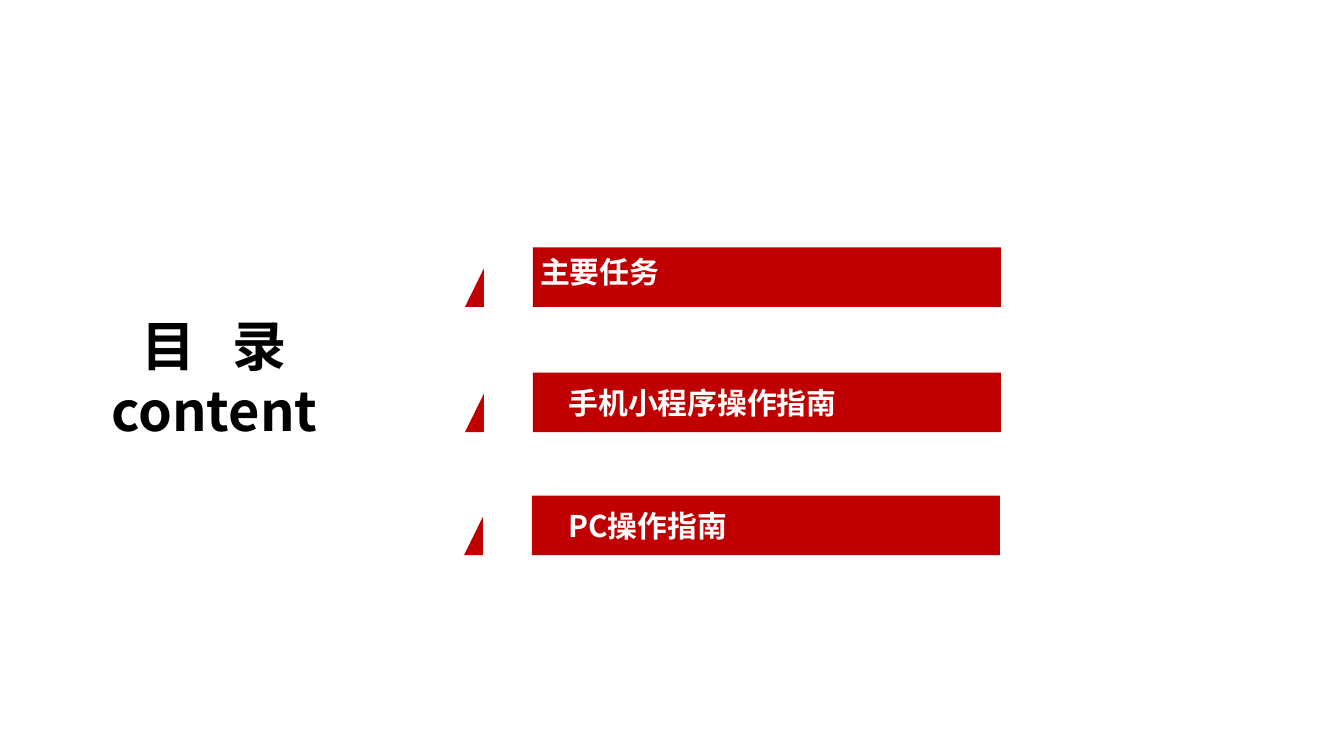
"""Build a table-of-contents slide with three red section bars."""
import pptx
import pptx.dml.color
import pptx.enum.text
import pptx.util
from lxml import etree
from pptx.oxml.ns import qn

Pt = pptx.util.Pt
RED = pptx.dml.color.RGBColor(0xC0, 0x00, 0x00)
WHITE = pptx.dml.color.RGBColor(0xFF, 0xFF, 0xFF)
BLACK = pptx.dml.color.RGBColor(0x00, 0x00, 0x00)
FONT = "Noto Sans CJK SC"

HEADING_LINES = [["目", " ", "录"], ["content"]]
HEADING_BOX = (41.8, 164.2, 146.2, 76.3)
HEADING_SIZE, LABEL_SIZE = 29, 16
HEADING_GAP = 13

SECTIONS = [
    {"label": "主要任务", "left": 249.1, "top": 132.6, "label_width": None},
    {"label": "手机小程序操作指南", "left": 249.1, "top": 199.7, "label_width": 193.7},
    {"label": "PC操作指南", "left": 248.6, "top": 265.6, "label_width": 98.6},
]
TRIANGLE = [(10.1, 11.3), (10.1, 31.8), (0, 31.8)]
BAR = [(36.4, 0), (287, 0), (287, 31.8), (36.4, 31.8)]
LABEL_LEFT, LABEL_OFFSET, LABEL_HEIGHT = 304.6, 6.4, 19.4
INNER_LABEL_INSET = 40.2


def add_run(paragraph, text, size, color):
    run = paragraph.add_run()
    run.text = text
    run.font.size = Pt(size)
    run.font.bold = True
    run.font.name = FONT
    run.font.color.rgb = color
    properties = run._r.get_or_add_rPr()
    etree.SubElement(properties, qn("a:ea")).set("typeface", FONT)
    return properties


def add_text_box(slide, left, top, width, height):
    shape = slide.shapes.add_textbox(Pt(left), Pt(top), Pt(width), Pt(height))
    frame = shape.text_frame
    frame.word_wrap = True
    frame.auto_size = pptx.enum.text.MSO_AUTO_SIZE.SHAPE_TO_FIT_TEXT
    frame.vertical_anchor = pptx.enum.text.MSO_ANCHOR.MIDDLE
    frame.margin_left = frame.margin_top = 0
    frame.margin_right = frame.margin_bottom = 0
    return frame


def add_section_bar(slide, left, top):
    outlines = [
        [(Pt(left + x), Pt(top + y)) for x, y in outline]
        for outline in (TRIANGLE, BAR)
    ]
    triangle, bar = outlines
    builder = slide.shapes.build_freeform(*triangle[0])
    builder.add_line_segments(triangle[1:])
    builder.move_to(*bar[0])
    builder.add_line_segments(bar[1:])
    shape = builder.convert_to_shape()
    shape.shadow.inherit = False
    shape.fill.solid()
    shape.fill.fore_color.rgb = RED
    shape.line.fill.background()
    return shape


def add_section(slide, section):
    bar = add_section_bar(slide, section["left"], section["top"])
    if section["label_width"] is None:
        frame = bar.text_frame
        frame.word_wrap = True
        frame.margin_left = Pt(INNER_LABEL_INSET)
        frame.vertical_anchor = pptx.enum.text.MSO_ANCHOR.TOP
    else:
        frame = add_text_box(slide, LABEL_LEFT, section["top"] + LABEL_OFFSET,
                             section["label_width"], LABEL_HEIGHT)
    paragraph = frame.paragraphs[0]
    paragraph.alignment = pptx.enum.text.PP_ALIGN.LEFT
    add_run(paragraph, section["label"], LABEL_SIZE, WHITE)


def add_heading(slide):
    frame = add_text_box(slide, *HEADING_BOX)
    for index, line in enumerate(HEADING_LINES):
        paragraph = frame.add_paragraph() if index else frame.paragraphs[0]
        paragraph.alignment = pptx.enum.text.PP_ALIGN.CENTER
        for text in line:
            properties = add_run(paragraph, text, HEADING_SIZE, BLACK)
            if text == " ":
                properties.set("spc", str(HEADING_GAP * 100))


def main():
    presentation = pptx.Presentation()
    presentation.slide_width = Pt(720)
    presentation.slide_height = Pt(405)
    slide = presentation.slides.add_slide(presentation.slide_layouts[6])
    add_heading(slide)
    for section in SECTIONS:
        add_section(slide, section)
    presentation.save("out.pptx")


if __name__ == "__main__":
    main()
